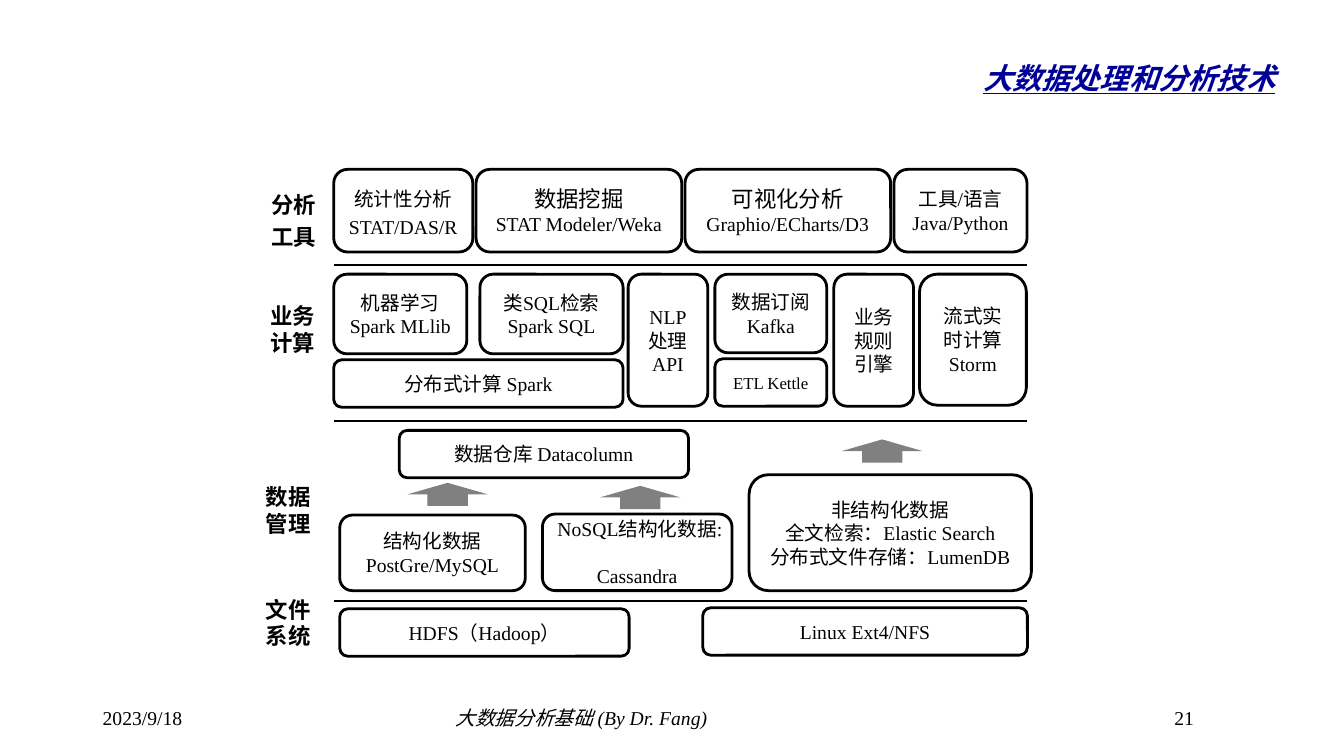
from dataclasses import dataclass

from lxml.etree import SubElement
from pptx import Presentation
from pptx.dml.color import RGBColor
from pptx.enum.shapes import MSO_CONNECTOR, MSO_SHAPE
from pptx.enum.text import MSO_ANCHOR, MSO_AUTO_SIZE, PP_ALIGN
from pptx.oxml.ns import qn
from pptx.shapes.autoshape import Shape
from pptx.slide import Slide
from pptx.text.text import TextFrame, _Run
from pptx.util import Inches, Length, Pt

FONT = "Times New Roman"
HUES = {"ink": "000000", "paper": "FFFFFF", "title": "000099", "arrow": "808080"}

# The grid has square cells, a tenth of an inch wide.
LEFT, RIGHT = 33.1, 101.9
TOOLS, WORK, FILES = 16.8, 27.2, 60.4
GAP = 0.32
WIDE, SLIM = 28.7, 4.7


@dataclass(frozen=True)
class Box:
    col: float
    row: float
    cols: float
    rows: float
    lines: tuple[str, ...]
    size: int = 14
    head: int = 0
    space: float = 1.0


@dataclass(frozen=True)
class Label:
    col: float
    row: float
    lines: tuple[str, str]
    space: float = 1.0


@dataclass(frozen=True)
class Note:
    col: float
    cols: float
    text: str
    slant: bool = False


@dataclass(frozen=True)
class Arrow:
    col: float
    row: float


@dataclass(frozen=True)
class Tool:
    cols: float
    lines: tuple[str, str]
    head: int = 14
    space: float = 1.0


TOOL_ROW = (
    Tool(13.8, ("统计性分析", "STAT/DAS/R"), space=1.2),
    Tool(20.4, ("数据挖掘", "STAT Modeler/Weka"), 16),
    Tool(20.4, ("可视化分析", "Graphio/ECharts/D3"), 16),
    Tool(13.2, ("工具/语言", "Java/Python")),
)

BOXES = (
    Box(LEFT, WORK, 13.2, 7.9, ("机器学习", "Spark MLlib")),
    Box(47.6, WORK, 14.2, 7.9, ("类SQL检索", "Spark SQL")),
    Box(LEFT, 35.7, WIDE, SLIM, ("分布式计算 Spark",)),
    Box(62.3, WORK, 7.9, 13.1, ("NLP处理API",)),
    Box(70.9, WORK, 11.1, 7.8, ("数据订阅", "Kafka")),
    Box(70.9, 35.6, 11.1, SLIM, ("ETL Kettle",), 12),
    Box(82.7, WORK, 7.9, 13.1, ("业务规则引擎",)),
    Box(91.2, WORK, 10.6, 13, ("流式实时计算", "Storm")),
    Box(39.6, 42.7, WIDE, SLIM, ("数据仓库 Datacolumn",)),
    Box(33.7, 51.1, 18.4, 7.5, ("结构化数据", "PostGre/MySQL")),
    Box(53.8, 51, 18.8, 7.6, ("NoSQL结构化数据: ", "Cassandra")),
    Box(74.3, 47.1, 28, 11.5,
        ("非结构化数据", "全文检索：Elastic Search", "分布式文件存储：LumenDB")),
    Box(33.7, FILES, WIDE, SLIM, ("HDFS（Hadoop）",)),
    Box(69.7, FILES - 0.1, 32.2, SLIM, ("Linux Ext4/NFS",)),
)

RULES = (26.3, 41.8, 59.6)
ARROWS = (Arrow(83.5, 43.6), Arrow(59.5, 48.2), Arrow(40.4, 47.9))

LABELS = (
    Label(25.9, 17.9, ("分析", "工具"), 1.2),
    Label(25.8, 29.5, ("业务", "计算")),
    Label(25.4, 47.4, ("数据", "管理")),
    Label(25.4, 58.6, ("文件", "系统")),
)

NOTES = (
    Note(115.5, 8.7, "21"),
    Note(44.2, 64.2, "大数据分析基础 (By Dr. Fang)", True),
    Note(9.2, 30, "2023/9/18"),
)


def cell(count: float) -> Length:
    """Turn a count of grid cells into a length."""
    return Inches(count / 10)


def hue(name: str) -> RGBColor:
    return RGBColor.from_string(HUES[name])


def add_run(frame: TextFrame, index: int, text: str, size: int,
            align: PP_ALIGN = PP_ALIGN.LEFT, space: float = 1.0,
            tone: str = "ink") -> _Run:
    """Put one run in the paragraph at index, adding it after the first."""
    para = frame.add_paragraph() if index else frame.paragraphs[0]
    para.alignment = align
    para.line_spacing = space
    run = para.add_run()
    run.text = text
    run.font.name = FONT
    run.font.size = Pt(size)
    run.font.color.rgb = hue(tone)
    return run


def add_form(slide: Slide, kind: MSO_SHAPE, col: float, row: float,
             cols: float, rows: float, tone: str) -> Shape:
    """Draw a filled shape with no line and no shadow."""
    form = slide.shapes.add_shape(kind, cell(col), cell(row), cell(cols), cell(rows))
    form.shadow.inherit = False
    form.fill.solid()
    form.fill.fore_color.rgb = hue(tone)
    form.line.fill.background()
    return form


def add_title(slide: Slide, text: str) -> None:
    title = slide.shapes.title
    title.left, title.top = cell(19.4), cell(0.5)
    title.width, title.height = cell(108.1), cell(11)
    frame = title.text_frame
    frame.auto_size = MSO_AUTO_SIZE.NONE
    frame.vertical_anchor = MSO_ANCHOR.MIDDLE
    run = add_run(frame, 0, text, 36, PP_ALIGN.RIGHT, tone="title")
    run.font.bold = run.font.italic = run.font.underline = True
    run._r.get_or_add_rPr().set("baseline", "-25000")


def add_note(slide: Slide, note: Note) -> None:
    area = slide.shapes.add_textbox(cell(note.col), cell(69.5), cell(note.cols), cell(4))
    area.text_frame.word_wrap = True
    add_run(area.text_frame, 0, note.text, 14).font.italic = note.slant


def add_box(slide: Slide, box: Box) -> None:
    form = add_form(slide, MSO_SHAPE.ROUNDED_RECTANGLE, box.col, box.row,
                    box.cols, box.rows, "paper")
    form.line.color.rgb = hue("ink")
    form.line.width = Pt(2)
    frame = form.text_frame
    frame.word_wrap = True
    frame.vertical_anchor = MSO_ANCHOR.MIDDLE
    for index, text in enumerate(box.lines):
        size = box.size if index else box.head or box.size
        add_run(frame, index, text, size, PP_ALIGN.CENTER, box.space)


def add_tools(slide: Slide) -> None:
    col = LEFT
    for tool in TOOL_ROW:
        add_box(slide, Box(col, TOOLS, tool.cols, 8.2, tool.lines,
                           head=tool.head, space=tool.space))
        col += tool.cols + GAP


def add_rule(slide: Slide, row: float) -> None:
    rule = slide.shapes.add_connector(
        MSO_CONNECTOR.STRAIGHT, cell(LEFT), cell(row), cell(RIGHT), cell(row))
    rule.line.color.rgb = hue("ink")
    rule.line.width = Pt(1.5)
    SubElement(rule.element.spPr, qn("a:effectLst"))


def add_label(slide: Slide, label: Label) -> None:
    form = add_form(slide, MSO_SHAPE.RECTANGLE, label.col, label.row, 6.7, 7.1, "paper")
    frame = form.text_frame
    frame.word_wrap = False
    frame.vertical_anchor = MSO_ANCHOR.TOP
    for index, text in enumerate(label.lines):
        add_run(frame, index, text, 16, PP_ALIGN.JUSTIFY, label.space).font.bold = True


def main() -> None:
    deck = Presentation()
    deck.slide_width, deck.slide_height = Inches(13.33), Inches(7.5)
    slide = deck.slides.add_slide(deck.slide_layouts.get_by_name("Title Only"))
    add_title(slide, "大数据处理和分析技术")
    for note in NOTES:
        add_note(slide, note)
    add_tools(slide)
    for box in BOXES:
        add_box(slide, box)
    for row in RULES:
        add_rule(slide, row)
    for arrow in ARROWS:
        add_form(slide, MSO_SHAPE.UP_ARROW, arrow.col, arrow.row, 8, 2.3, "arrow")
    for label in LABELS:
        add_label(slide, label)
    deck.save("out.pptx")


if __name__ == "__main__":
    main()
